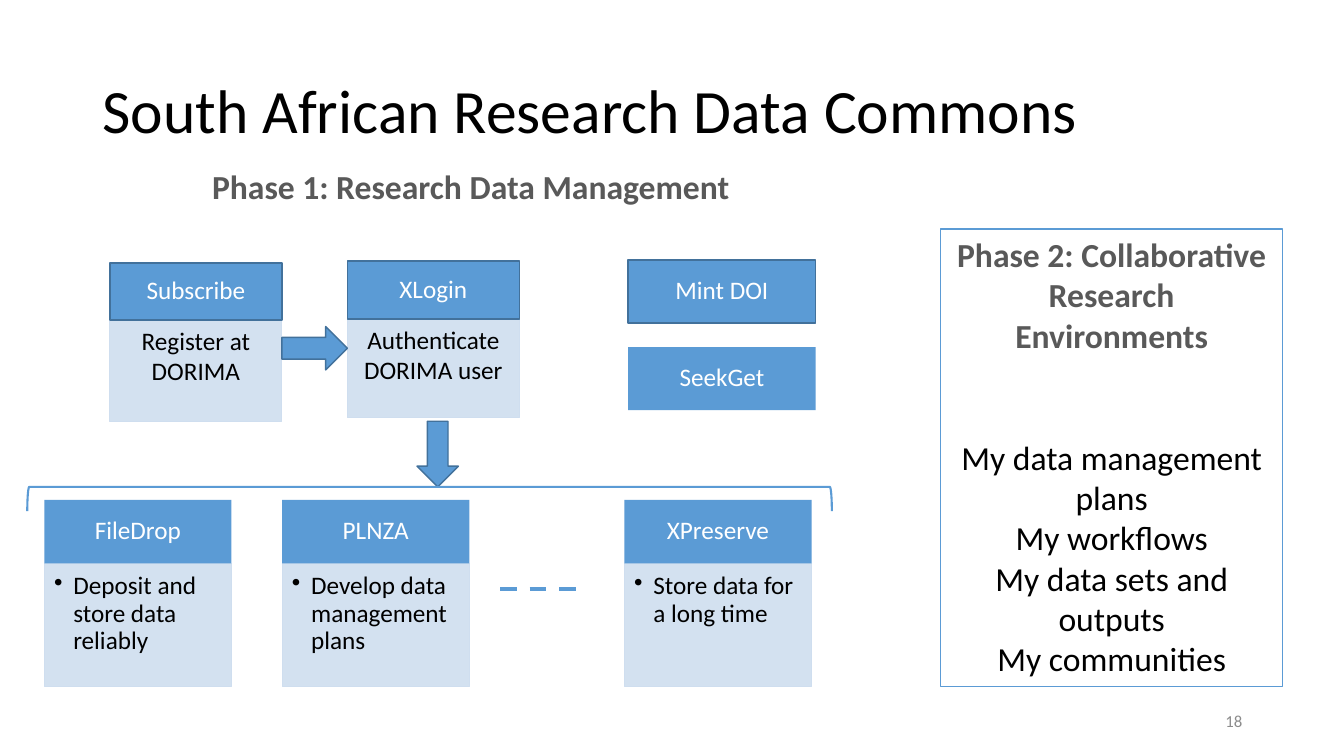
from dataclasses import dataclass

from lxml import etree
from pptx import Presentation
from pptx.dml.color import RGBColor
from pptx.enum.dml import MSO_LINE
from pptx.enum.shapes import MSO_CONNECTOR, MSO_SHAPE
from pptx.enum.text import MSO_ANCHOR, PP_ALIGN
from pptx.oxml.ns import qn
from pptx.util import Inches, Pt

RECT, BRACKET = MSO_SHAPE.RECTANGLE, MSO_SHAPE.LEFT_BRACKET
RIGHT_ARROW, DOWN_ARROW = MSO_SHAPE.RIGHT_ARROW, MSO_SHAPE.DOWN_ARROW
STRAIGHT, DASH = MSO_CONNECTOR.STRAIGHT, MSO_LINE.DASH
LEFT, CENTER, RIGHT = PP_ALIGN.LEFT, PP_ALIGN.CENTER, PP_ALIGN.RIGHT
TOP, MIDDLE = MSO_ANCHOR.TOP, MSO_ANCHOR.MIDDLE

SLIDE_W, SLIDE_H = Inches(13.33), Inches(7.5)


@dataclass(frozen=True)
class Theme:
    font: str = "Calibri"
    blue: str = "5B9BD5"
    edge: str = "42719B"
    pale: str = "CFDEEF"
    white: str = "FFFFFF"
    black: str = "000000"
    heading: str = "595959"
    muted: str = "8C8C8C"
    title_size: int = 44
    phase_size: int = 24
    label_size: int = 18
    number_size: int = 12
    # Text margins in points: left, top, right, bottom
    margins: tuple = (7.2, 3.6, 7.2, 3.6)
    header_margins: tuple = (10, 6, 10, 6)
    list_margins: tuple = (7, 7, 10, 11.5)


THEME = Theme()


def rgb(code):
    return RGBColor.from_string(code)


def across(percent):
    return round(SLIDE_W * percent / 100)


def down(percent):
    return round(SLIDE_H * percent / 100)


def place(box):
    """Turn a box in percent of the slide into slide lengths."""
    x, y, w, h = box
    return across(x), down(y), across(w), down(h)


def add_panel(slide, box, kind=RECT, fill=None, line=None, weight=1, opacity=100):
    panel = slide.shapes.add_shape(kind, *place(box))
    panel.shadow.inherit = False
    if fill:
        panel.fill.solid()
        panel.fill.fore_color.rgb = rgb(fill)
        if opacity < 100:
            tint = panel.fill._xPr.find(qn("a:solidFill"))[0]
            etree.SubElement(tint, qn("a:alpha")).set("val", str(opacity * 1000))
    else:
        panel.fill.background()
    if line:
        panel.line.color.rgb = rgb(line)
        panel.line.width = Pt(weight)
    else:
        panel.line.fill.background()
    return panel


def write(shape, *lines, size=THEME.label_size, color=THEME.black, bold=False,
          align=CENTER, anchor=TOP, spacing=1.0, margins=THEME.margins, bullet=False):
    frame = shape.text_frame
    frame.word_wrap = True
    frame.vertical_anchor = anchor
    (frame.margin_left, frame.margin_top,
     frame.margin_right, frame.margin_bottom) = map(Pt, margins)
    for line in lines:
        # The first line fills the paragraph that is already there
        paragraph = frame.add_paragraph() if frame.text else frame.paragraphs[0]
        paragraph.alignment = align
        paragraph.line_spacing = spacing
        run = paragraph.add_run()
        run.text = line
        run.font.name = THEME.font
        run.font.size = Pt(size)
        run.font.bold = bold
        run.font.color.rgb = rgb(color)
        if bullet:
            props = paragraph._p.get_or_add_pPr()
            props.set("marL", str(Inches(0.19)))
            props.set("indent", str(-Inches(0.19)))
            etree.SubElement(props, qn("a:buChar")).set("char", "•")
    return frame


def add_header(slide, box, label, line=None):
    header = add_panel(slide, box, fill=THEME.blue, line=line)
    write(header, label, color=THEME.white, anchor=MIDDLE, spacing=0.9,
          margins=THEME.header_margins)


def add_card(slide, box, label, detail, header_share, line=None, **detail_format):
    x, y, w, h = box
    header_h = h * header_share
    body = add_panel(slide, (x, y + header_h, w, h - header_h), fill=THEME.pale,
                     line=THEME.pale, weight=0.75, opacity=90)
    write(body, detail, **detail_format)
    add_header(slide, (x, y, w, header_h), label, line)


def add_title(slide, box):
    title = slide.shapes.add_textbox(*place(box))
    write(title, "South African Research Data Commons", size=THEME.title_size,
          align=LEFT, anchor=MIDDLE, spacing=0.9)


def add_access_steps(slide, box):
    x, y, w, h = box
    card_w = w * 0.42
    add_card(slide, (x, y + 0.27, card_w, h), "Subscribe", "Register at DORIMA",
             0.36, THEME.edge)
    add_card(slide, (x + w - card_w, y, card_w, h - 0.2), "XLogin",
             "Authenticate DORIMA user", 0.37, THEME.edge)
    add_panel(slide, (x + card_w, y + 8.67, w - 2 * card_w, 5.73), RIGHT_ARROW,
              THEME.blue, THEME.edge)
    add_panel(slide, (x + w * 0.75, y + h + 0.27, 3.08, 8.67), DOWN_ARROW,
              THEME.blue, THEME.edge)


def add_search_tools(slide, box):
    x, y, w, h = box
    button_h = h * 0.42
    add_header(slide, (x, y, w, button_h), "Mint DOI", THEME.edge)
    add_header(slide, (x, y + h - button_h, w, button_h), "SeekGet")


def add_bracket(slide, box):
    # The bracket is drawn upright around the centre of its box, then turned
    left, top, width, height = place(box)
    bracket = add_panel(slide, box, BRACKET, line=THEME.blue, weight=1.5)
    bracket.left = left + (width - height) // 2
    bracket.top = top + (height - width) // 2
    bracket.width, bracket.height = height, width
    bracket.rotation = 90
    bracket.adjustments[0] = 0.083


def add_services(slide, box):
    x, y, w, h = box
    services = (
        (0, "FileDrop", "Deposit and store data reliably"),
        (0.31, "PLNZA", "Develop data management plans"),
        (0.756, "XPreserve", "Store data for a long time"),
    )
    for offset, label, detail in services:
        add_card(slide, (x + w * offset, y, w * 0.244, h), label, detail, 0.34,
                 align=LEFT, spacing=0.9, margins=THEME.list_margins, bullet=True)
    # Dashes stand for further services
    dash_y = down(y + h * 0.476)
    dashes = slide.shapes.add_connector(STRAIGHT, across(x + w * 0.594), dash_y,
                                        across(x + w * 0.705), dash_y)
    dashes.line.color.rgb = rgb(THEME.blue)
    dashes.line.width = Pt(3)
    dashes.line.dash_style = DASH
    etree.SubElement(dashes._element.spPr, qn("a:effectLst"))


def add_phase_one(slide, box):
    x, y, w, h = box
    heading = add_panel(slide, (x + 6.15, y, 53.7, 6.67), fill=THEME.white)
    write(heading, "Phase 1: Research Data Management", size=THEME.phase_size,
          color=THEME.heading, bold=True)
    add_access_steps(slide, (x + 6.15, y + 13.2, 30.46, 20.93))
    add_search_tools(slide, (x + 44.71, y + 13.07, 13.95, 19.87))
    add_bracket(slide, (x, y + 43.07, w, 3.2))
    add_services(slide, (x + 1.27, y + h - 24.67, 57.09, 24.67))


def add_phase_two(slide, box):
    panel = add_panel(slide, box, fill=THEME.white, line=THEME.blue)
    write(panel, "Phase 2: Collaborative Research Environments",
          size=THEME.phase_size, color=THEME.heading, bold=True)
    frame = write(panel, "My data management plans", "My workflows",
                  "My data sets and outputs", "My communities",
                  size=THEME.phase_size)
    frame.paragraphs[1].space_before = Pt(58.5)


def add_slide_number(slide, box):
    number = slide.shapes.add_textbox(*place(box))
    write(number, "18", size=THEME.number_size, color=THEME.muted, align=RIGHT,
          anchor=MIDDLE)


def main():
    deck = Presentation()
    deck.slide_width, deck.slide_height = SLIDE_W, SLIDE_H
    slide = deck.slides.add_slide(deck.slide_layouts[6])
    add_title(slide, (6.9, 5.33, 86.25, 19.33))
    add_phase_one(slide, (2.03, 21.33, 59.86, 69.47))
    add_phase_two(slide, (70, 30.27, 25.43, 60.53))
    add_slide_number(slide, (70.67, 92.67, 22.5, 5.33))
    deck.save("out.pptx")


if __name__ == "__main__":
    main()
